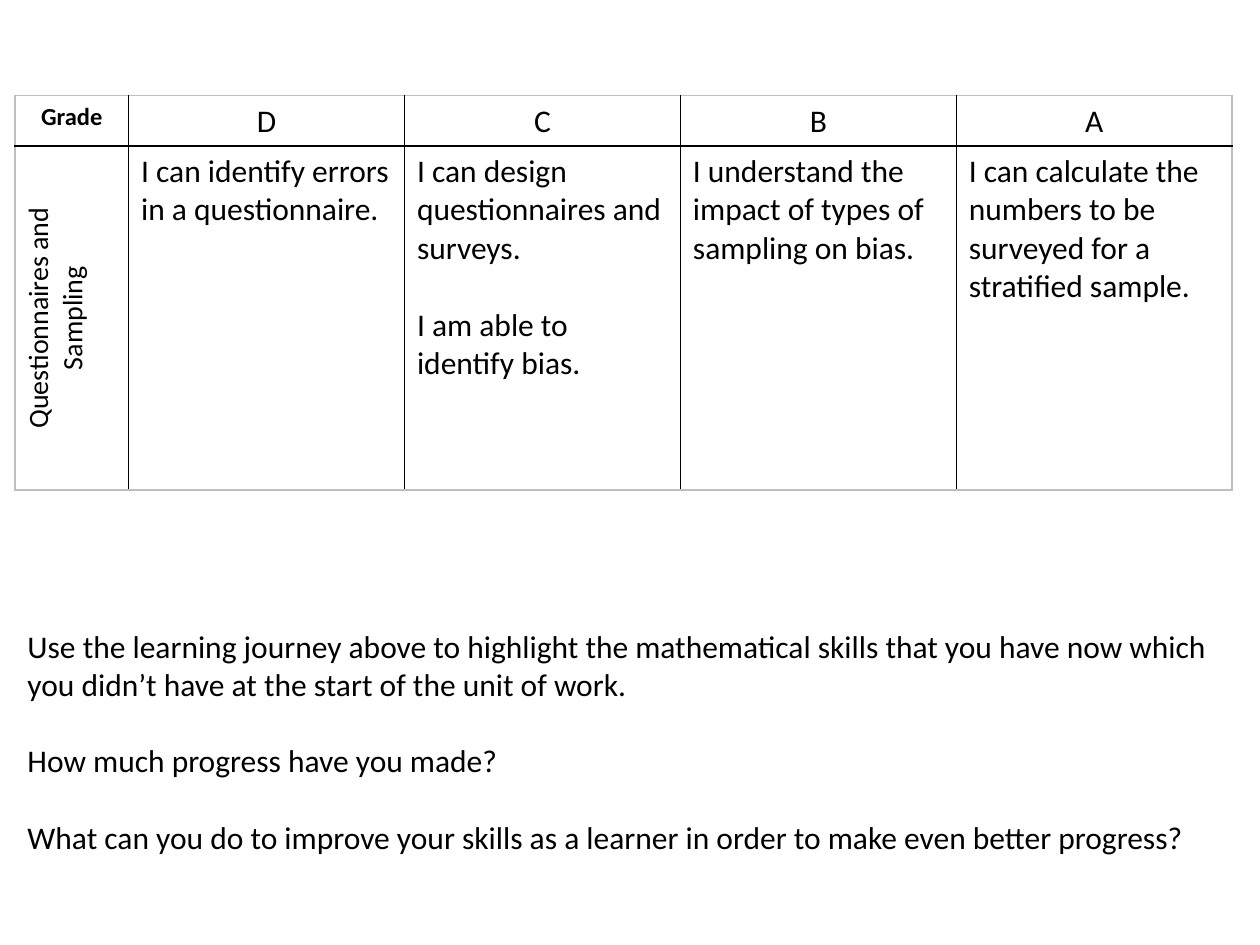
from lxml import etree
from pptx import Presentation
from pptx.dml.color import RGBColor
from pptx.enum.text import PP_ALIGN
from pptx.oxml.ns import qn
from pptx.util import Inches, Pt

CENTER, LEFT = PP_ALIGN.CENTER, PP_ALIGN.LEFT
COLORS = {"text": "000000", "inner": "000000", "outer": "BFBFBF"}
FONT = "Calibri"
GAP = 22
COLS = [0.9] + [2.19] * 4
ROWS = [0.4, 2.73]
X, Y = 0.12, 0.76

GRID = [
    [["Grade"], ["D"], ["C"], ["B"], ["A"]],
    [
        ["Questionnaires and Sampling"],
        ["I can identify errors in a questionnaire."],
        ["I can design questionnaires and surveys.", "I am able to identify bias."],
        ["I understand the impact of types of sampling on bias."],
        ["I can calculate the numbers to be surveyed for a stratified sample."],
    ],
]
PROMPTS = [
    "Use the learning journey above to highlight the mathematical skills that you have now which you didn’t have at the start of the unit of work.",
    "How much progress have you made?",
    "What can you do to improve your skills as a learner in order to make even better progress?",
]


def write(tf, lines, size, align=LEFT, bold=False):
    tf.word_wrap = True
    for i, line in enumerate(lines):
        p = tf.paragraphs[0] if i == 0 else tf.add_paragraph()
        p.text = line
        p.alignment = align
        p.space_before = Pt(GAP if i else 0)
        p.font.name = FONT
        p.font.size = Pt(size)
        p.font.bold = bold
        p.font.color.rgb = RGBColor.from_string(COLORS["text"])


def border(cell, side, color):
    ln = etree.SubElement(cell._tc.get_or_add_tcPr(), qn(f"a:ln{side}"), w=str(Pt(1)))
    fill = etree.SubElement(ln, qn("a:solidFill"))
    etree.SubElement(fill, qn("a:srgbClr"), val=color)


prs = Presentation()
prs.slide_width, prs.slide_height = Inches(10), Inches(7.5)
s = prs.slides.add_slide(prs.slide_layouts[6])

sp = s.shapes.add_textbox(Inches(X), Inches(4.93), Inches(9.76), Inches(1.92))
write(sp.text_frame, PROMPTS, 18)

table = s.shapes.add_table(
    len(ROWS), len(COLS), Inches(X), Inches(Y), Inches(sum(COLS)), Inches(sum(ROWS))
).table
table.first_row = table.horz_banding = False
for col, width in zip(table.columns, COLS):
    col.width = Inches(width)
for row, height in zip(table.rows, ROWS):
    row.height = Inches(height)

for r, texts in enumerate(GRID):
    for c, lines in enumerate(texts):
        cell = table.cell(r, c)
        header = r == 0 or c == 0
        size = (14, 16)[r] if c == 0 else 18
        write(cell.text_frame, lines, size, CENTER if header else LEFT, r == c == 0)
        edges = {"L": c == 0, "R": c == len(COLS) - 1, "T": r == 0, "B": r == len(ROWS) - 1}
        for side, is_outer in edges.items():
            border(cell, side, COLORS["outer" if is_outer else "inner"])
        cell.fill.background()

table.cell(1, 0)._tc.get_or_add_tcPr().set("vert", "vert270")

prs.save("out.pptx")
